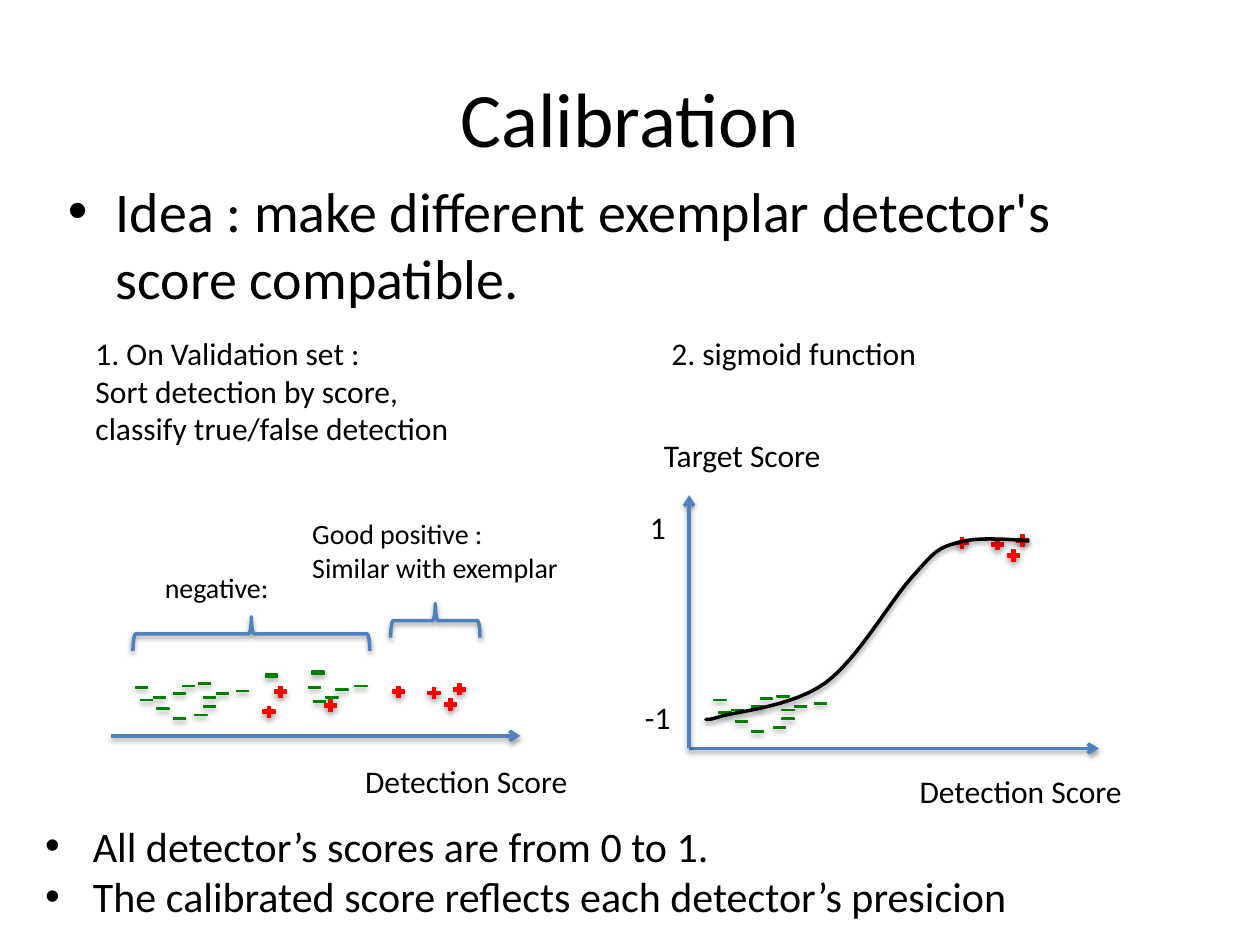
"""Build the Calibration slide with score plots before and after the sigmoid fit."""
import pptx
import pptx.dml.color
import pptx.enum.shapes
import pptx.enum.text
import pptx.oxml
import pptx.util
from pptx.util import Inches

BLACK = pptx.dml.color.RGBColor(0x00, 0x00, 0x00)
BLUE = pptx.dml.color.RGBColor(0x4F, 0x81, 0xBD)
RED = pptx.dml.color.RGBColor(0xFF, 0x00, 0x00)
GREEN = pptx.dml.color.RGBColor(0x00, 0x80, 0x00)
SHAPE = pptx.enum.shapes.MSO_SHAPE
DRAWING_NS = 'xmlns:a="http://schemas.openxmlformats.org/drawingml/2006/main"'

presentation = pptx.Presentation()
presentation.slide_width = Inches(10)
presentation.slide_height = Inches(7.5)
slide = presentation.slides.add_slide(presentation.slide_layouts[6])


def add_text(box, text, size, wrap=True, bullet=False):
    label = slide.shapes.add_textbox(*map(Inches, box))
    frame = label.text_frame
    frame.text = text
    frame.word_wrap = wrap
    for paragraph in frame.paragraphs:
        if bullet:
            properties = paragraph._p.get_or_add_pPr()
            properties.set("marL", str(Inches(0.38)))
            properties.set("indent", str(Inches(-0.38)))
            properties.append(pptx.oxml.parse_xml(f'<a:buFont {DRAWING_NS} typeface="Arial"/>'))
            properties.append(pptx.oxml.parse_xml(f'<a:buChar {DRAWING_NS} char="•"/>'))
        for run in paragraph.runs:
            run.font.size = pptx.util.Pt(size)
            run.font.name = "Calibri"
            run.font.color.rgb = BLACK
    return frame


def style_line(shape, color, width=2, distance=1.6, opacity=38):
    shape.line.color.rgb = color
    shape.line.width = pptx.util.Pt(width)
    shape._element.spPr.append(pptx.oxml.parse_xml(
        f'<a:effectLst {DRAWING_NS}><a:outerShdw blurRad="{pptx.util.Pt(3.1)}" '
        f'dist="{pptx.util.Pt(distance)}" dir="5400000" rotWithShape="0">'
        f'<a:srgbClr val="000000"><a:alpha val="{opacity * 1000}"/></a:srgbClr>'
        '</a:outerShdw></a:effectLst>'))


title = add_text((0.5, 0.3, 9, 1.25), "Calibration", 44)
title.vertical_anchor = pptx.enum.text.MSO_ANCHOR.MIDDLE
title.paragraphs[0].alignment = pptx.enum.text.PP_ALIGN.CENTER
add_text((0.44, 1.35, 9, 1.25),
         "Idea : make different exemplar detector's score compatible.", 32, bullet=True)
add_text((0.66, 2.6, 3.96, 1.01),
         "1. On Validation set :\nSort detection by score,\nclassify true/false detection", 18)
add_text((0.26, 6.46, 9.07, 0.91),
         "All detector’s scores are from 0 to 1.\n"
         "The calibrated score reflects each detector’s presicion", 24, bullet=True)

for box, text, size in [
    ((5.23, 2.6, 2.16, 0.4), "2. sigmoid function", 18),
    ((2.8, 6, 1.83, 0.4), "Detection Score", 18),
    ((7.2, 6.08, 1.83, 0.4), "Detection Score", 18),
    ((5.17, 3.41, 1.49, 0.4), "Target Score", 18),
    ((5.06, 3.98, 0.33, 0.4), "1", 18),
    ((5.02, 5.49, 0.41, 0.4), "-1", 18),
    ((2.38, 4.05, 2.17, 0.64), "Good positive :\nSimilar with exemplar", 16),
    ((1.21, 4.48, 1.04, 0.37), "negative:", 16),
]:
    add_text(box, text, size, wrap=False)

for ends in [(0.88, 5.84, 4.13, 5.84), (5.47, 5.94, 8.72, 5.94), (5.47, 5.94, 5.47, 3.93)]:
    axis = slide.shapes.add_connector(
        pptx.enum.shapes.MSO_CONNECTOR.STRAIGHT, *map(Inches, ends))
    style_line(axis, BLUE)
    axis.line._get_or_add_ln().append(
        pptx.oxml.parse_xml(f'<a:tailEnd {DRAWING_NS} type="arrow"/>'))

for box in [(3.32, 4.57, 0.27, 0.71), (1.86, 4.09, 0.27, 1.88)]:
    brace = slide.shapes.add_shape(SHAPE.RIGHT_BRACE, *map(Inches, box))
    brace.rotation = 270
    brace.fill.background()
    style_line(brace, BLUE)

good_positives = [(3.51, 5.53), (3.1, 5.43), (3.58, 5.41), (3.38, 5.44)]
low_negatives = [
    (1.1, 5.53), (1.2, 5.51), (1.06, 5.43), (1.43, 5.42), (1.36, 5.48), (1.36, 5.68),
    (1.23, 5.6), (1.6, 5.58), (1.53, 5.65), (1.6, 5.51), (1.7, 5.48), (1.56, 5.4), (1.86, 5.46),
]
high_negatives = [(2.47, 5.54), (2.57, 5.51), (2.43, 5.43), (2.8, 5.42), (2.65, 5.45)]
thick_negatives = [(2.46, 5.28), (2.09, 5.3)]
poor_positives = [(2.56, 5.54), (2.16, 5.43), (2.07, 5.59)]
calibrated_positives = [(x + 4.47, y - 1.18) for x, y in good_positives]
calibrated_negatives = [(x + 4.59, y + 0.1) for x, y in low_negatives]

for marks, preset, color, height in [
    (low_negatives + high_negatives + calibrated_negatives, SHAPE.MATH_MINUS, GREEN, 0.05),
    (thick_negatives, SHAPE.MATH_MINUS, GREEN, 0.12),
    (good_positives + poor_positives + calibrated_positives, SHAPE.MATH_PLUS, RED, 0.12),
]:
    for x, y in marks:
        mark = slide.shapes.add_shape(
            preset, Inches(x), Inches(y), Inches(0.13), Inches(height))
        mark.fill.solid()
        mark.fill.fore_color.rgb = color
        style_line(mark, color, width=0.75, distance=1.8, opacity=35)

sigmoid_knots = [
    (8.17, 4.29), (7.95, 4.28), (7.74, 4.26), (7.59, 4.31), (7.43, 4.35), (7.4, 4.4),
    (7.23, 4.59), (7.06, 4.78), (6.8, 5.24), (6.55, 5.42), (6.3, 5.6), (5.9, 5.64),
    (5.74, 5.68), (5.58, 5.73), (5.63, 5.7), (5.61, 5.71), (5.59, 5.71), (5.62, 5.71),
    (5.62, 5.71),
]
sigmoid_points = []
for start in range(0, len(sigmoid_knots) - 1, 3):
    for step in range(1, 13):
        t = step / 12
        weights = ((1 - t) ** 3, 3 * t * (1 - t) ** 2, 3 * t ** 2 * (1 - t), t ** 3)
        knots = sigmoid_knots[start:start + 4]
        sigmoid_points.append(tuple(
            Inches(sum(w * knot[i] for w, knot in zip(weights, knots))) for i in (0, 1)))

builder = slide.shapes.build_freeform(*map(Inches, sigmoid_knots[0]))
builder.add_line_segments(sigmoid_points, close=False)
sigmoid = builder.convert_to_shape()
sigmoid.fill.background()
style_line(sigmoid, BLACK)

presentation.save("out.pptx")
